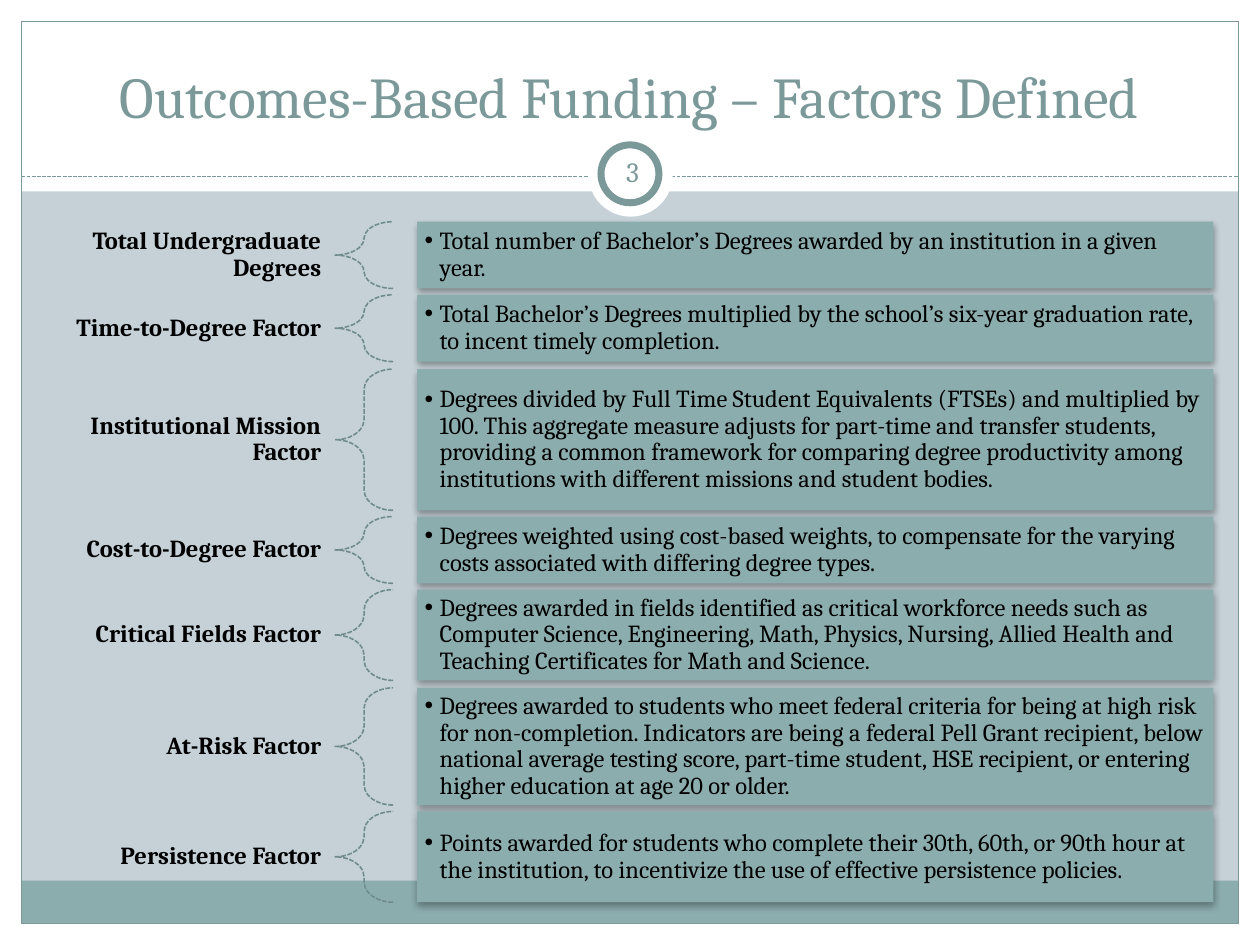
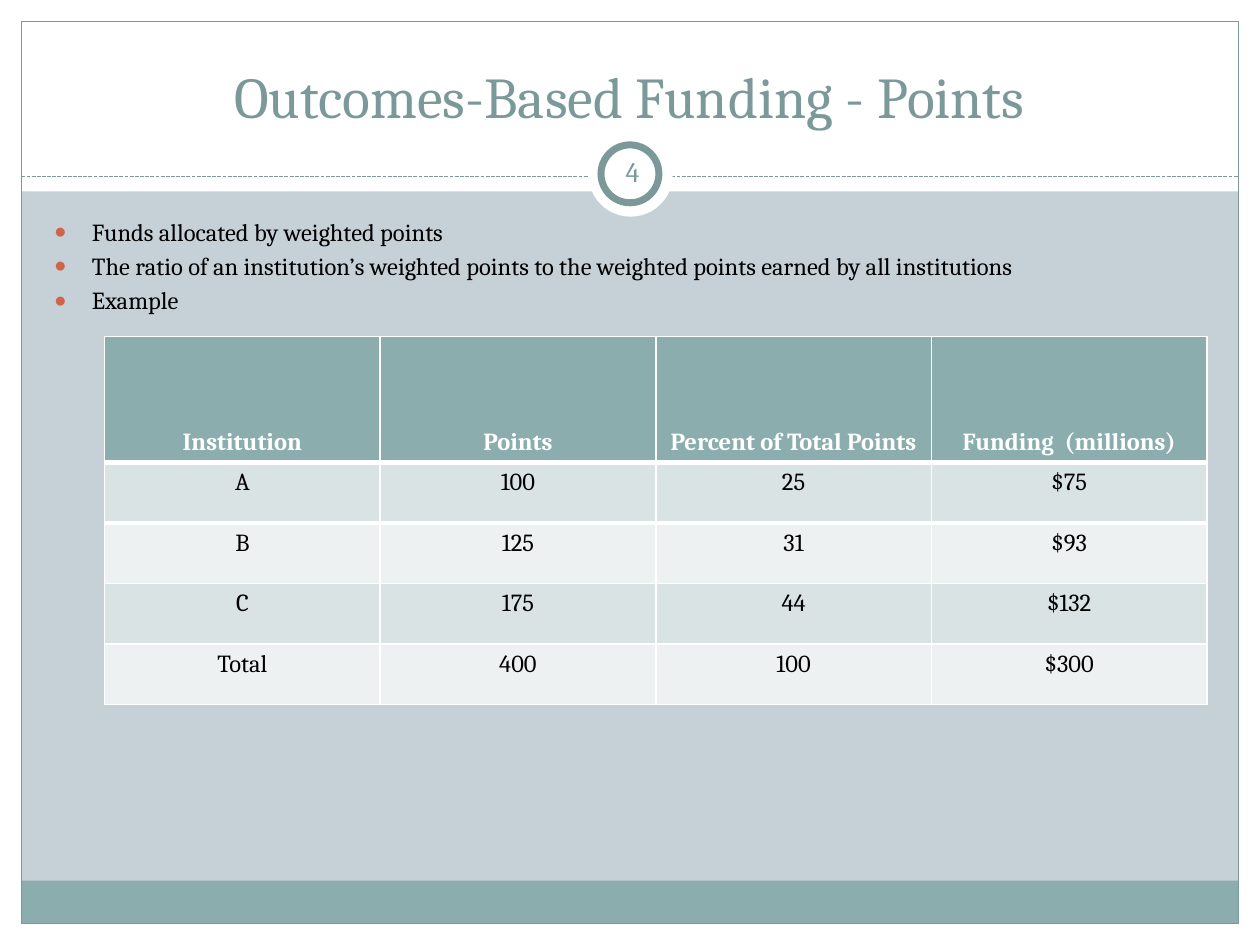
"""Build two slides on outcomes-based funding: factor definitions and a points example."""
from dataclasses import dataclass

from lxml.etree import SubElement
from pptx import Presentation
from pptx.dml.color import RGBColor
from pptx.enum.dml import MSO_LINE
from pptx.enum.shapes import MSO_CONNECTOR, MSO_SHAPE as Shape
from pptx.enum.text import MSO_ANCHOR as Anchor, MSO_AUTO_SIZE, PP_ALIGN as Align
from pptx.oxml.ns import qn
from pptx.util import Pt

PX = 9144


@dataclass(frozen=True)
class Theme:
    font: str = "Cambria"
    background: str = "C5D1D7"
    white: str = "FFFFFF"
    black: str = "000000"
    teal: str = "8CADAE"
    accent: str = "7C999A"
    brace: str = "708B8B"
    bullet: str = "D16349"
    bands: tuple = ("DAE3E3", "EEF1F2")
    title_size: int = 33
    number_size: int = 16
    text_size: int = 14


theme = Theme()


def draw(slide, kind, box, fill=None, line=None, weight=0.75):
    """Add a preset shape with an optional fill and outline."""
    shape = slide.shapes.add_shape(kind, *[n * PX for n in box])
    shape.shadow.inherit = False
    if fill:
        shape.fill.solid()
        shape.fill.fore_color.rgb = RGBColor.from_string(fill)
    else:
        shape.fill.background()
    if line:
        shape.line.color.rgb = RGBColor.from_string(line)
        shape.line.width = Pt(weight)
    else:
        shape.line.fill.background()
    return shape


def write(paragraph, text, align, color=theme.black, size=theme.text_size, bold=False, bullet=None):
    """Add one formatted run, with an optional (indent, mark, colour, percent) bullet."""
    paragraph.alignment = align
    run = paragraph.add_run()
    run.text = text
    run.font.name = theme.font
    run.font.size = Pt(size)
    run.font.bold = bold
    run.font.color.rgb = RGBColor.from_string(color)
    if bullet:
        indent, mark, mark_color, percent = bullet
        properties = paragraph._p.get_or_add_pPr()
        properties.set("marL", str(indent * PX))
        properties.set("indent", str(-indent * PX))
        SubElement(SubElement(properties, qn("a:buClr")), qn("a:srgbClr"), val=mark_color)
        SubElement(properties, qn("a:buSzPct"), val=str(percent * 1000))
        SubElement(properties, qn("a:buFont"), typeface="Arial")
        SubElement(properties, qn("a:buChar"), char=mark)


prs = Presentation()
prs.slide_width, prs.slide_height = 1000 * PX, 750 * PX
master_fill = prs.slide_master.background.fill
master_fill.solid()
master_fill.fore_color.rgb = RGBColor.from_string(theme.background)

slides = []
for number, layout, heading in (
    (3, 5, "Outcomes-Based Funding – Factors Defined"),
    (4, 1, "Outcomes-Based Funding - Points"),
):
    slide = prs.slides.add_slide(prs.slide_layouts[layout])
    slides.append(slide)
    for margin in ((0, 733, 1000, 17), (0, 0, 1000, 152), (0, 0, 17, 750), (983, 0, 17, 750)):
        draw(slide, Shape.RECTANGLE, margin, theme.white)
    draw(slide, Shape.RECTANGLE, (17, 699, 966, 34), theme.teal)
    draw(slide, Shape.RECTANGLE, (17, 17, 966, 716), line=theme.accent)

    divider = slide.shapes.add_connector(MSO_CONNECTOR.STRAIGHT, 17 * PX, 140 * PX, 983 * PX, 140 * PX)
    divider.line.color.rgb = RGBColor.from_string(theme.accent)
    divider.line.width = Pt(0.75)
    divider.line.dash_style = MSO_LINE.SQUARE_DOT
    SubElement(divider.element.spPr, qn("a:effectLst"))

    draw(slide, Shape.OVAL, (467, 105, 67, 67), theme.white)
    draw(slide, Shape.OVAL, (477, 115, 46, 46), theme.white, theme.accent, 4)
    page_number = slide.shapes.add_textbox(477 * PX, 112 * PX, 50 * PX, 48 * PX).text_frame
    page_number.word_wrap = True
    page_number.vertical_anchor = Anchor.MIDDLE
    page_number.margin_left = page_number.margin_right = 5 * PX
    write(page_number.paragraphs[0], str(number), Align.CENTER, theme.accent, theme.number_size)

    title = slide.shapes.title
    title.element.getparent().append(title.element)
    title.left, title.top, title.width, title.height = 33 * PX, 25 * PX, 933 * PX, 83 * PX
    title.text_frame.vertical_anchor = Anchor.BOTTOM
    title.text_frame.auto_size = MSO_AUTO_SIZE.NONE
    write(title.text_frame.paragraphs[0], heading, Align.CENTER, theme.accent, theme.title_size)

factors_slide, points_slide = slides

factors = (
    ("Total Undergraduate Degrees", 53,
     "Total number of Bachelor’s Degrees awarded by an institution in a given year."),
    ("Time-to-Degree Factor", 53,
     "Total Bachelor’s Degrees multiplied by the school’s six-year graduation rate, "
     "to incent timely completion."),
    ("Institutional Mission Factor", 112,
     "Degrees divided by Full Time Student Equivalents (FTSEs) and multiplied by 100. "
     "This aggregate measure adjusts for part-time and transfer students, providing a common "
     "framework for comparing degree productivity among institutions with different missions "
     "and student bodies."),
    ("Cost-to-Degree Factor", 53,
     "Degrees weighted using cost-based weights, to compensate for the varying costs "
     "associated with differing degree types."),
    ("Critical Fields Factor", 72,
     "Degrees awarded in fields identified as critical workforce needs such as Computer Science, "
     "Engineering, Math, Physics, Nursing, Allied Health and Teaching Certificates for Math "
     "and Science."),
    ("At-Risk Factor", 93,
     "Degrees awarded to students who meet federal criteria for being at high risk for "
     "non-completion. Indicators are being a federal Pell Grant recipient, below national "
     "average testing score, part-time student, HSE recipient, or entering higher education "
     "at age 20 or older."),
    ("Persistence Factor", 72,
     "Points awarded for students who complete their 30th, 60th, or 90th hour at the institution, "
     "to incentivize the use of effective persistence policies."),
)
first_top, last_bottom = 176, 716
gap = (last_bottom - first_top - sum(height for _, height, _ in factors)) / (len(factors) - 1)
next_top = first_top
for factor, height, definition in factors:
    top = round(next_top)
    next_top += height + gap

    label = factors_slide.shapes.add_textbox(34 * PX, top * PX, 232 * PX, height * PX).text_frame
    label.margin_left = label.margin_right = 11 * PX
    label.margin_top = label.margin_bottom = 4 * PX

    brace = draw(factors_slide, Shape.LEFT_BRACE, (266, top, 46, height), line=theme.brace, weight=0.9)
    brace.adjustments[0] = 0.35
    brace.line.dash_style = MSO_LINE.SQUARE_DOT

    panel = draw(factors_slide, Shape.RECTANGLE, (331, top, 632, height), theme.teal)
    shadow = SubElement(panel.element.spPr.find(qn("a:effectLst")), qn("a:outerShdw"),
                        blurRad=str(Pt(4)), dist=str(Pt(2)), dir="5400000", rotWithShape="0")
    shadow_color = SubElement(shadow, qn("a:srgbClr"), val=theme.black)
    SubElement(shadow_color, qn("a:alpha"), val="35000")
    body = panel.text_frame
    body.margin_left = body.margin_right = body.margin_top = body.margin_bottom = 6 * PX

    for frame in (label, body):
        frame.word_wrap = True
        frame.vertical_anchor = Anchor.MIDDLE
        frame.paragraphs[0].line_spacing = 0.9
    write(label.paragraphs[0], factor, Align.RIGHT, bold=True)
    write(body.paragraphs[0], definition, Align.LEFT, bullet=(12, "•", theme.black, 100))

summary = points_slide.placeholders[1]
summary.element.getparent().append(summary.element)
summary.left, summary.top, summary.width, summary.height = 33 * PX, 167 * PX, 930 * PX, 500 * PX
summary.text_frame.auto_size = MSO_AUTO_SIZE.NONE
for index, statement in enumerate((
    "Funds allocated by weighted points",
    "The ratio of an institution’s weighted points to the weighted points earned by all institutions",
    "Example",
)):
    paragraph = summary.text_frame.add_paragraph() if index else summary.text_frame.paragraphs[0]
    write(paragraph, statement, Align.LEFT, bullet=(30, "●", theme.bullet, 85))

funding = (
    ("Institution", "Points", "Percent of Total Points", "Funding  (millions)"),
    ("A", "100", "25", "$75"),
    ("B", "125", "31", "$93"),
    ("C", "175", "44", "$132"),
    ("Total", "400", "100", "$300"),
)
table = points_slide.shapes.add_table(len(funding), 4, 83 * PX, 267 * PX, 875 * PX, 292 * PX).table
for row_index, values in enumerate(funding):
    is_header = row_index == 0
    table.rows[row_index].height = (100 if is_header else 48) * PX
    for column_index, value in enumerate(values):
        cell = table.cell(row_index, column_index)
        if row_index < 2:
            edge = SubElement(cell._tc.get_or_add_tcPr(), qn("a:lnB" if is_header else "a:lnT"), w=str(Pt(3)))
            SubElement(SubElement(edge, qn("a:solidFill")), qn("a:srgbClr"), val=theme.white)
        cell.fill.solid()
        cell.fill.fore_color.rgb = RGBColor.from_string(
            theme.teal if is_header else theme.bands[(row_index - 1) % 2])
        cell.vertical_anchor = Anchor.BOTTOM if is_header else Anchor.TOP
        write(cell.text_frame.paragraphs[0], value, Align.CENTER,
              theme.white if is_header else theme.black, bold=is_header)

prs.save("out.pptx")
